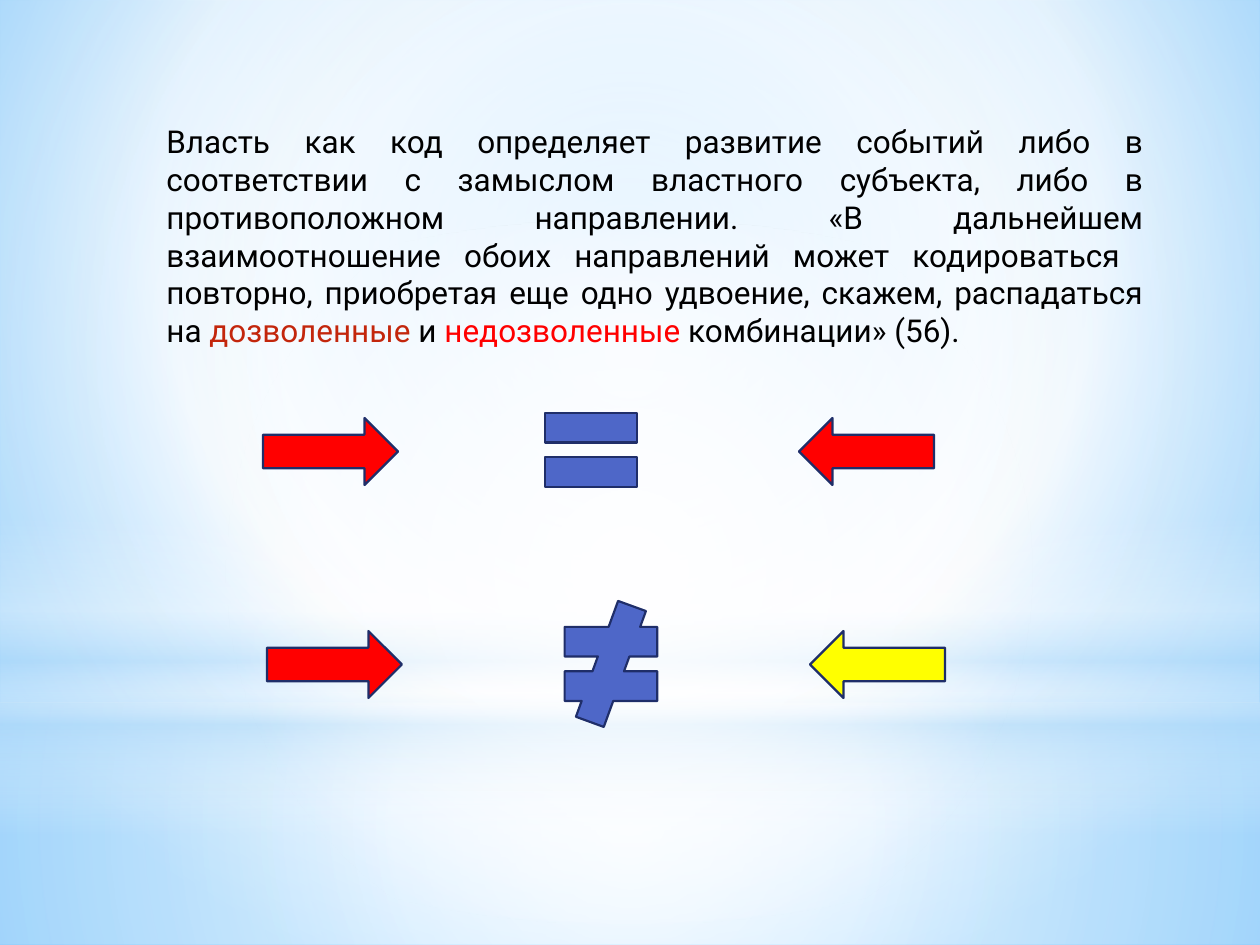
import lxml.etree
import pptx
import pptx.dml.color
import pptx.enum.shapes
import pptx.enum.text
import pptx.oxml.ns
import pptx.util

SCALE = 914400 / 126
COLORS = {
    "white": "FFFFFF", "pale": "B4DCFA", "sky": "9ED5FF", "azure": "5BB9FF",
    "black": "000000", "brick": "C3260C", "red": "FF0000", "yellow": "FFFF00",
    "blue": "4E67C8", "navy": "1F2E69",
}
SHAPES = pptx.enum.shapes.MSO_SHAPE
qn = pptx.oxml.ns.qn


def add_shape(kind, *bounds):
    shape = page.shapes.add_shape(kind, *(round(value * SCALE) for value in bounds))
    shape.shadow.inherit = False
    return shape


def paint_gradient(fill, owner, stops, focus):
    fill.solid()
    solid = next(owner.iter(qn("a:solidFill")))
    gradient = lxml.etree.Element(qn("a:gradFill"), rotWithShape="1")
    stop_list = lxml.etree.SubElement(gradient, qn("a:gsLst"))
    for position, color, opacity in stops:
        stop = lxml.etree.SubElement(stop_list, qn("a:gs"), pos=str(position * 1000))
        value = lxml.etree.SubElement(stop, qn("a:srgbClr"), val=COLORS[color])
        if opacity < 100:
            lxml.etree.SubElement(value, qn("a:alpha"), val=str(opacity * 1000))
    if focus:
        route = lxml.etree.SubElement(gradient, qn("a:path"), path="circle")
        sides = {side: str(share * 1000) for side, share in zip("ltrb", focus)}
        lxml.etree.SubElement(route, qn("a:fillToRect"), **sides)
    else:
        lxml.etree.SubElement(gradient, qn("a:lin"), ang="5400000", scaled="0")
    solid.getparent().replace(solid, gradient)


deck = pptx.Presentation()
deck.slide_width = round(1260 * SCALE)
deck.slide_height = round(945 * SCALE)
page = deck.slides.add_slide(deck.slide_layouts[6])

paint_gradient(
    page.background.fill, page.element,
    [(0, "sky", 100), (60, "white", 100), (100, "azure", 100)], (20, 10, 20, 60),
)

center = (50, 50, 50, 50)
glows = [
    (SHAPES.RECTANGLE, (0, 703, 1260, 242), center,
     [(0, "white", 91), (37, "white", 76), (100, "pale", 79)]),
    (SHAPES.RECTANGLE, (0, 0, 1260, 703), center,
     [(0, "white", 89), (48, "white", 62), (100, "pale", 79)]),
    (SHAPES.RECTANGLE, (0, 519, 1260, 315), None,
     [(0, "white", 0), (29, "white", 30), (45, "pale", 40),
      (55, "white", 26), (65, "pale", 60), (100, "white", 0)]),
    (SHAPES.OVAL, (0, 220, 1260, 703), center,
     [(0, "white", 100), (56, "white", 0)]),
]
for kind, bounds, focus, stops in glows:
    glow = add_shape(kind, *bounds)
    glow.line.fill.background()
    paint_gradient(glow.fill, glow.element.spPr, stops, focus)

box = page.shapes.add_textbox(*(round(value * SCALE) for value in (154, 116, 1002, 242)))
frame = box.text_frame
frame_format = {
    "word_wrap": True,
    "auto_size": pptx.enum.text.MSO_AUTO_SIZE.SHAPE_TO_FIT_TEXT,
}
for name, value in frame_format.items():
    setattr(frame, name, value)
para = frame.paragraphs[0]
para.alignment = pptx.enum.text.PP_ALIGN.JUSTIFY
font_format = {"name": "Roboto", "size": pptx.util.Pt(18)}
quote = [
    ("Власть как код определяет развитие событий либо в соответствии с замыслом "
     "властного субъекта, либо в противоположном направлении. «В дальнейшем "
     "взаимоотношение обоих направлений может кодироваться  повторно, приобретая "
     "еще одно удвоение, скажем, распадаться на ", "black"),
    ("дозволенные", "brick"),
    (" и ", "black"),
    ("недозволенные", "red"),
    (" комбинации» (56).", "black"),
]
for text, color in quote:
    span = para.add_run()
    span.text = text
    for name, value in font_format.items():
        setattr(span.font, name, value)
    span.font.color.rgb = pptx.dml.color.RGBColor.from_string(COLORS[color])

arrow_size = (135, 67)
sign_size = (126, 126)
symbols = [
    (SHAPES.RIGHT_ARROW, (263, 418), arrow_size, "red"),
    (SHAPES.LEFT_ARROW, (799, 418), arrow_size, "red"),
    (SHAPES.MATH_EQUAL, (528, 387), sign_size, "blue"),
    (SHAPES.RIGHT_ARROW, (267, 631), arrow_size, "red"),
    (SHAPES.LEFT_ARROW, (810, 631), arrow_size, "yellow"),
    (SHAPES.MATH_NOT_EQUAL, (548, 601), sign_size, "blue"),
]
for kind, corner, size, color in symbols:
    symbol = add_shape(kind, *corner, *size)
    symbol.fill.solid()
    symbol.fill.fore_color.rgb = pptx.dml.color.RGBColor.from_string(COLORS[color])
    symbol.line.color.rgb = pptx.dml.color.RGBColor.from_string(COLORS["navy"])
    symbol.line.width = pptx.util.Pt(1.25)

deck.save("out.pptx")
